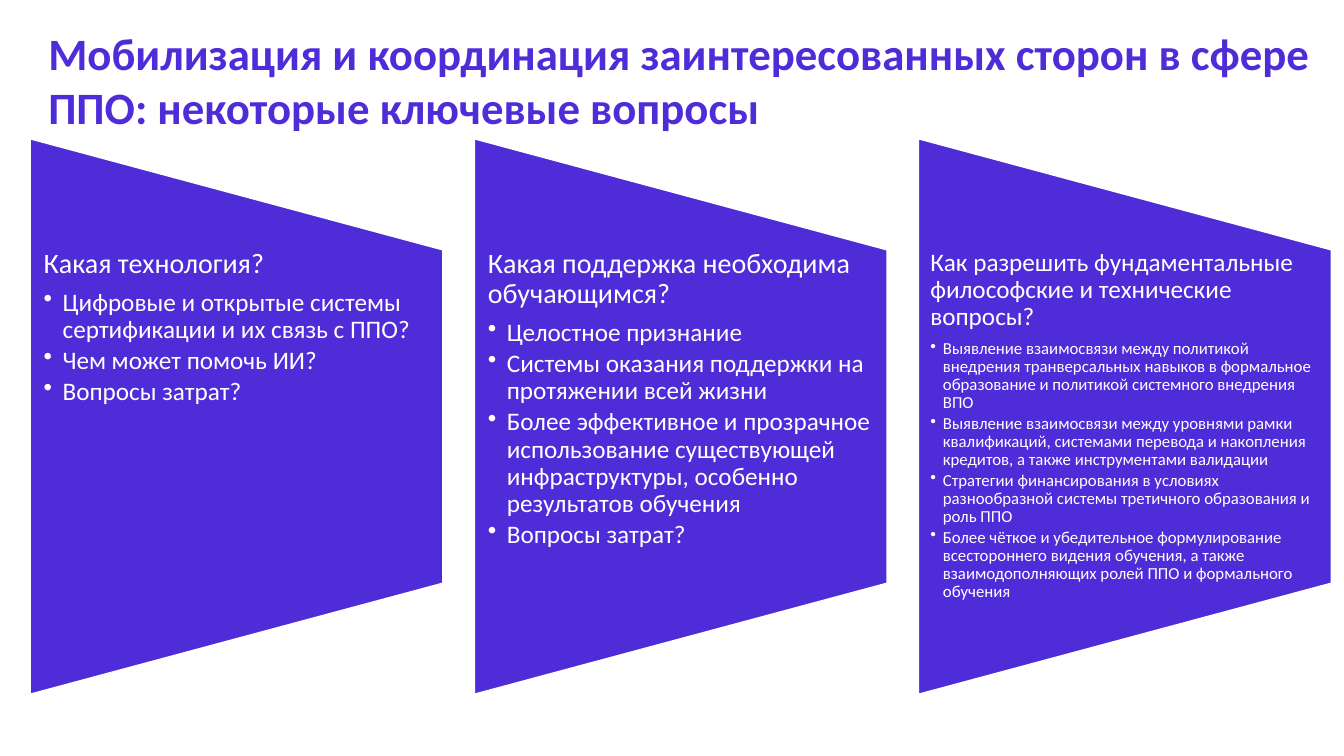
from lxml import etree
from pptx import Presentation
from pptx import util as u
from pptx.dml.color import RGBColor
from pptx.enum import shapes, text
from pptx.oxml.ns import qn

TITLE = "Мобилизация и координация заинтересованных сторон в сфере ППО: некоторые ключевые вопросы"
PANELS = [
    dict(question="Какая технология?", question_size=20, point_size=18, inset=10, indent=13.5,
         points=["Цифровые и открытые системы сертификации и их связь с ППО?",
                 "Чем может помочь ИИ?",
                 "Вопросы затрат?"]),
    dict(question="Какая поддержка необходима обучающимся?", question_size=20, point_size=18,
         inset=10, indent=13.5,
         points=["Целостное признание",
                 "Системы оказания поддержки на протяжении всей жизни",
                 "Более эффективное и прозрачное использование существующей инфраструктуры, "
                 "особенно результатов обучения",
                 "Вопросы затрат?"]),
    dict(question="Как разрешить фундаментальные философские и технические вопросы?",
         question_size=18, point_size=12, inset=8.64, indent=9,
         points=["Выявление взаимосвязи между политикой внедрения транверсальных навыков "
                 "в формальное образование и политикой системного внедрения ВПО",
                 "Выявление взаимосвязи между уровнями рамки квалификаций, системами перевода "
                 "и накопления кредитов, а также инструментами валидации",
                 "Стратегии финансирования в условиях разнообразной системы третичного "
                 "образования и роль ППО",
                 "Более чёткое и убедительное формулирование всестороннего видения обучения, "
                 "а также взаимодополняющих ролей ППО и формального обучения"]),
]
THEME = dict(font="Calibri", violet=RGBColor(0x4E, 0x2C, 0xD8),
             white=RGBColor(0xFF, 0xFF, 0xFF), title_size=32)

SLIDE_W, SLIDE_H = 960, 540
PANEL_LEFT, PANEL_PITCH, PANEL_W, PANEL_H = 21.24, 317.3, 295.4, 397.4
PANEL_MIDDLE = 297.5
WORDS_H = 238.5


def write(paragraph, words, size, color, bold=False, spacing=1.0, after=0, indent=0):
    paragraph.alignment = text.PP_ALIGN.LEFT
    paragraph.line_spacing = spacing
    paragraph.space_after = u.Pt(after)
    if indent:
        paragraph.level = 1
        props = paragraph._p.get_or_add_pPr()
        props.set("marL", str(u.Pt(indent)))
        props.set("indent", str(-u.Pt(indent)))
        etree.SubElement(props, qn("a:buChar"), char="•")
    run = paragraph.add_run()
    run.text = words
    run.font.name = THEME["font"]
    run.font.size = u.Pt(size)
    run.font.bold = bold
    run.font.color.rgb = color


def text_frame(slide, left, top, width, height, anchor):
    frame = slide.shapes.add_textbox(u.Pt(left), u.Pt(top), u.Pt(width), u.Pt(height)).text_frame
    frame.word_wrap = True
    frame.vertical_anchor = anchor
    return frame


def add_panel(slide, left, panel):
    center = left + PANEL_W / 2
    trapezoid = slide.shapes.add_shape(
        shapes.MSO_SHAPE.FLOWCHART_MANUAL_OPERATION,
        u.Pt(center - PANEL_H / 2), u.Pt(PANEL_MIDDLE - PANEL_W / 2),
        u.Pt(PANEL_H), u.Pt(PANEL_W))
    trapezoid.rotation = 270
    trapezoid.shadow.inherit = False
    trapezoid.fill.solid()
    trapezoid.fill.fore_color.rgb = THEME["violet"]
    trapezoid.line.color.rgb = THEME["white"]
    trapezoid.line.width = u.Pt(1.5)

    frame = text_frame(slide, left, PANEL_MIDDLE - WORDS_H / 2, PANEL_W, WORDS_H,
                       text.MSO_ANCHOR.TOP)
    frame.margin_left = frame.margin_right = u.Pt(panel["inset"])
    frame.margin_top = frame.margin_bottom = 0
    write(frame.paragraphs[0], panel["question"], panel["question_size"], THEME["white"],
          spacing=0.9, after=0.35 * panel["question_size"])
    for point in panel["points"]:
        write(frame.add_paragraph(), point, panel["point_size"], THEME["white"],
              spacing=0.9, after=0.15 * panel["point_size"], indent=panel["indent"])


def main():
    deck = Presentation()
    deck.slide_width, deck.slide_height = u.Pt(SLIDE_W), u.Pt(SLIDE_H)
    slide = deck.slides.add_slide(deck.slide_layouts[6])
    for index, panel in enumerate(PANELS):
        add_panel(slide, PANEL_LEFT + index * PANEL_PITCH, panel)
    title = text_frame(slide, 27.4, 14.4, 939.6, 85, text.MSO_ANCHOR.MIDDLE)
    write(title.paragraphs[0], TITLE, THEME["title_size"], THEME["violet"], bold=True)
    deck.save("out.pptx")


if __name__ == "__main__":
    main()
